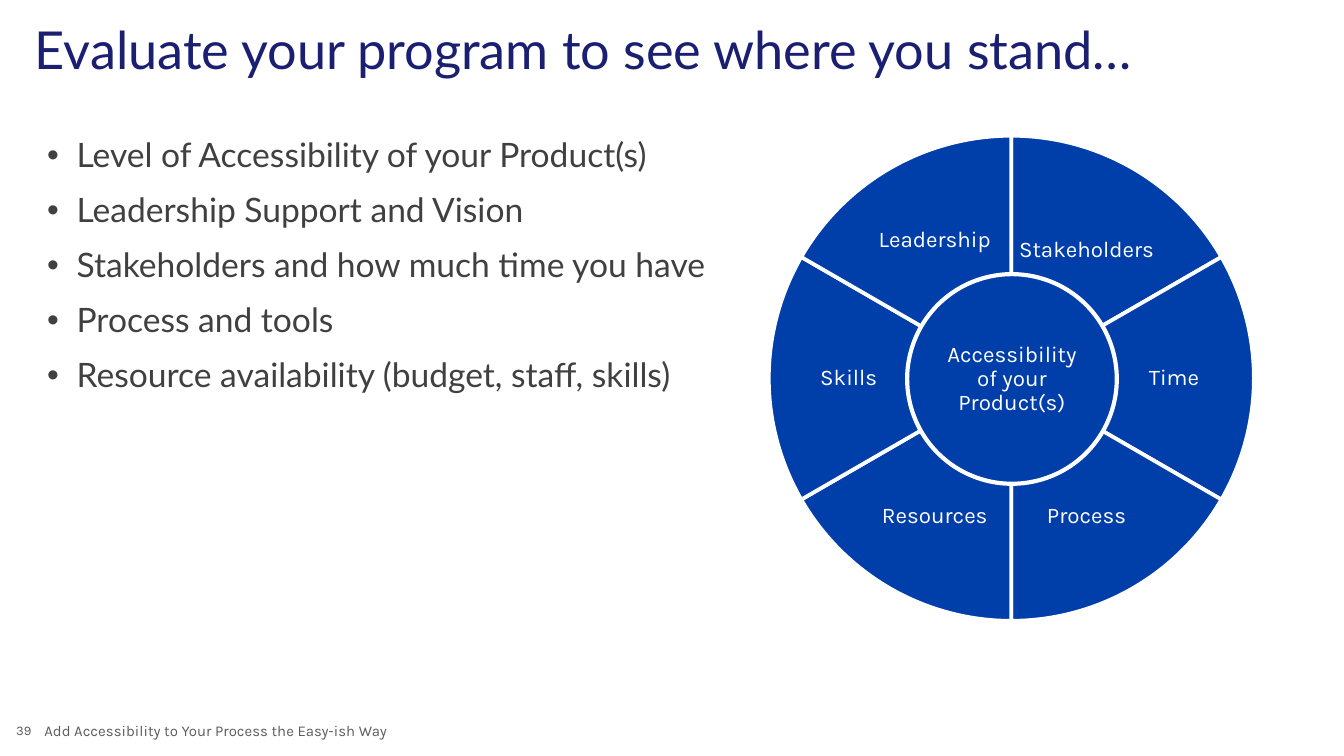
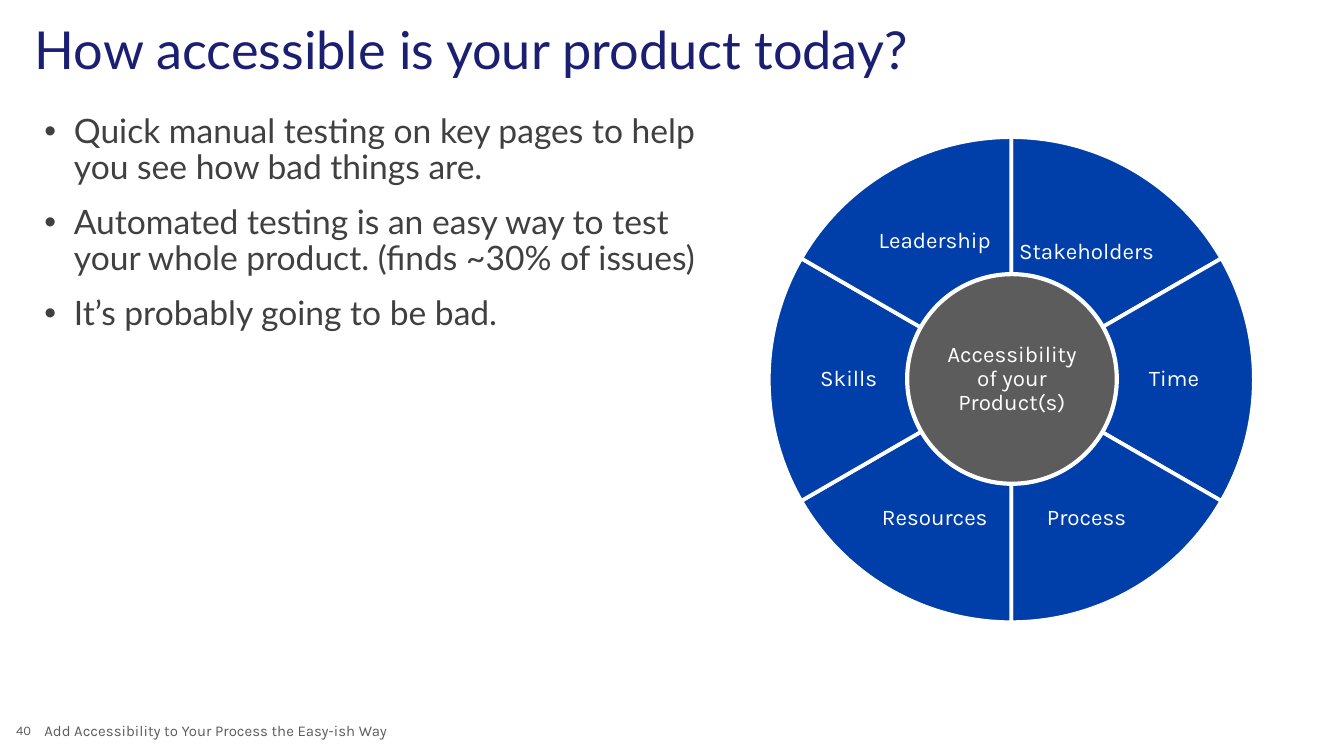
from pptx import Presentation
from pptx.dml.color import RGBColor
from pptx.enum.shapes import MSO_SHAPE
from pptx.enum.text import MSO_ANCHOR, MSO_AUTO_SIZE, PP_ALIGN
from pptx.util import Inches, Pt

COLORS = {
    "title": "1A1F71",
    "body": "404040",
    "muted": "5C5C5C",
    "wheel": "003EA9",
    "white": "FFFFFF",
}
HEADING_FONT = "Lato"
LABEL_FONT = "Karla"
PAGE_WIDTH = 10
PAGE_HEIGHT = PAGE_WIDTH * 9 / 16

FOOTER = "Add Accessibility to Your Process the Easy-ish Way"
HUB_LABEL = "Accessibility of your Product(s)"

WHEEL_LEFT, WHEEL_SIZE = 5.72, 3.61
HUB_LEFT, HUB_TOP, HUB_SIZE = 6.75, 2.04, 1.56
# Clockwise from the top: label, centre offset from the wheel's centre, label size
SLICES = [
    ("Stakeholders", 0.56, -0.95, 1.05, 0.77),
    ("Time", 1.21, 0, 1.09, 0.73),
    ("Process", 0.56, 1.03, 1.05, 0.77),
    ("Resources", -0.57, 1.03, 1.05, 0.77),
    ("Skills", -1.21, 0, 1.09, 0.73),
    ("Leadership", -0.57, -1.03, 1.05, 0.77),
]

PAGES = [
    {
        "number": 39,
        "title": "Evaluate your program to see where you stand…",
        "bullets": [
            "Level of Accessibility of your Product(s)",
            "Leadership Support and Vision",
            "Stakeholders and how much time you have",
            "Process and tools",
            "Resource availability (budget, staff, skills)",
        ],
        "bullet_area": (0.35, 1.03, 5.36, 4.21),
        "wheel_top": 1.01,
        "hub_color": "wheel",
    },
    {
        "number": 40,
        "title": "How accessible is your product today?",
        "bullets": [
            "Quick manual testing on key pages to help you see how bad things are.",
            "Automated testing is an easy way to test your whole product. "
            "(finds ~30% of issues)",
            "It’s probably going to be bad.",
        ],
        "bullet_area": (0.33, 0.85, 5.06, 4.21),
        "wheel_top": 1.02,
        "hub_color": "muted",
    },
]


def rgb(name):
    return RGBColor.from_string(COLORS[name])


def inches(*lengths):
    return [Inches(length) for length in lengths]


def write(shape, *texts, font=LABEL_FONT, size=12, color="white", align=PP_ALIGN.LEFT,
          anchor=MSO_ANCHOR.TOP, line_spacing=1.0, gap=0, hanging=0, wrap=True):
    """Fill a shape with one paragraph per text; gap is the space between them."""
    frame = shape.text_frame
    frame.auto_size = MSO_AUTO_SIZE.NONE
    frame.word_wrap = wrap
    frame.vertical_anchor = anchor
    frame.margin_left = frame.margin_top = frame.margin_right = frame.margin_bottom = 0
    for index, text in enumerate(texts):
        para = frame.add_paragraph() if index else frame.paragraphs[0]
        para.alignment = align
        para.line_spacing = line_spacing
        para.space_before = Pt(gap if index else 0)
        if hanging:
            properties = para._p.get_or_add_pPr()
            properties.set("marL", str(Inches(hanging)))
            properties.set("indent", str(-Inches(hanging)))
        span = para.add_run()
        span.text = text
        span.font.name = font
        span.font.size = Pt(size)
        span.font.color.rgb = rgb(color)


class Slides:
    def __init__(self):
        self.deck = Presentation()
        self.deck.slide_width = Inches(PAGE_WIDTH)
        self.deck.slide_height = Inches(PAGE_HEIGHT)
        self.page = None

    def add_page(self, number):
        self.page = self.deck.slides.add_slide(self.deck.slide_layouts[1])
        self.text_box(FOOTER, 0.33, 5.37, 3.53, 0.13, size=8, color="muted")
        self.text_box(str(number), 0.12, 5.37, 0.12, 0.12, size=7, color="muted",
                      anchor=MSO_ANCHOR.MIDDLE, wrap=False)

    def text_box(self, text, *area, parent=None, **style):
        box = (parent or self.page).shapes.add_textbox(*inches(*area))
        write(box, text, **style)

    def place(self, placeholder, area):
        (placeholder.left, placeholder.top,
         placeholder.width, placeholder.height) = inches(*area)

    def title(self, text):
        title = self.page.shapes.title
        self.place(title, (0.26, 0.2, 9.5, 0.41))
        write(title, text, font=HEADING_FONT, size=28, color="title", line_spacing=0.85)

    def bullets(self, texts, area):
        body = self.page.placeholders[1]
        self.place(body, area)
        write(body, *texts, font=HEADING_FONT, size=18, color="body",
              line_spacing=0.9, gap=10, hanging=0.22)

    def shape(self, parent, kind, area, fill, line_width):
        shape = parent.shapes.add_shape(kind, *inches(*area))
        shape.shadow.inherit = False
        shape.fill.solid()
        shape.fill.fore_color.rgb = rgb(fill)
        shape.line.color.rgb = rgb("white")
        shape.line.width = Pt(line_width)
        return shape

    def wheel(self, top, hub_color):
        """Draw equal slices with labels around a round hub."""
        group = self.page.shapes.add_group_shape()
        center_x, center_y = WHEEL_LEFT + WHEEL_SIZE / 2, top + WHEEL_SIZE / 2
        label_style = {"align": PP_ALIGN.CENTER, "anchor": MSO_ANCHOR.MIDDLE,
                       "line_spacing": 0.9}
        sweep = 360 / len(SLICES)
        for index, (label, dx, dy, width, height) in enumerate(SLICES):
            start = 270 + index * sweep
            pie = self.shape(group, MSO_SHAPE.PIE,
                             (WHEEL_LEFT, top, WHEEL_SIZE, WHEEL_SIZE), "wheel", 2)
            # Angles are stored in 60000ths of a degree, adjustments in 100000ths
            pie.adjustments[0] = start % 360 * 0.6
            pie.adjustments[1] = (start + sweep) % 360 * 0.6
            self.text_box(label, center_x + dx - width / 2, center_y + dy - height / 2,
                          width, height, parent=group, **label_style)
        hub = self.shape(group, MSO_SHAPE.OVAL,
                         (HUB_LEFT, HUB_TOP, HUB_SIZE, HUB_SIZE), hub_color, 2.25)
        write(hub, HUB_LABEL, **label_style)


def main():
    slides = Slides()
    for content in PAGES:
        slides.add_page(content["number"])
        slides.wheel(content["wheel_top"], content["hub_color"])
        slides.bullets(content["bullets"], content["bullet_area"])
        slides.title(content["title"])
    slides.deck.save("out.pptx")


if __name__ == "__main__":
    main()
